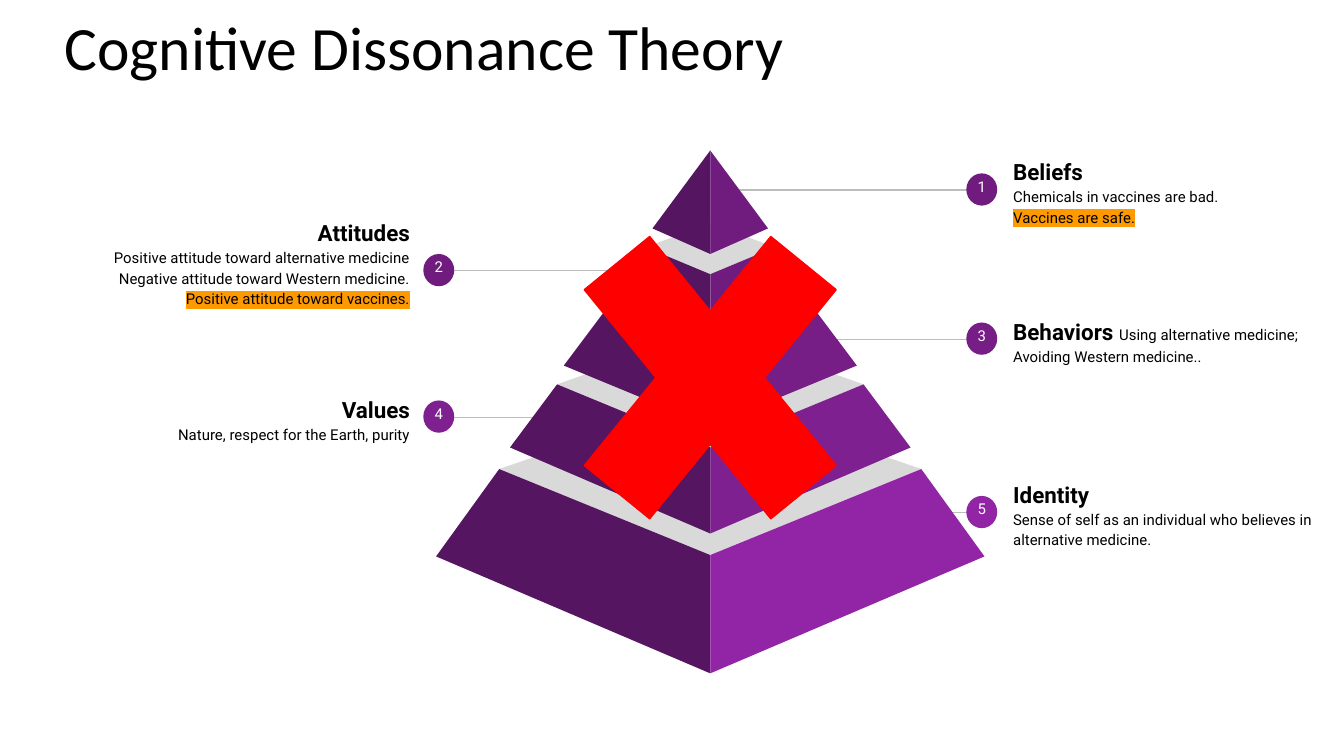
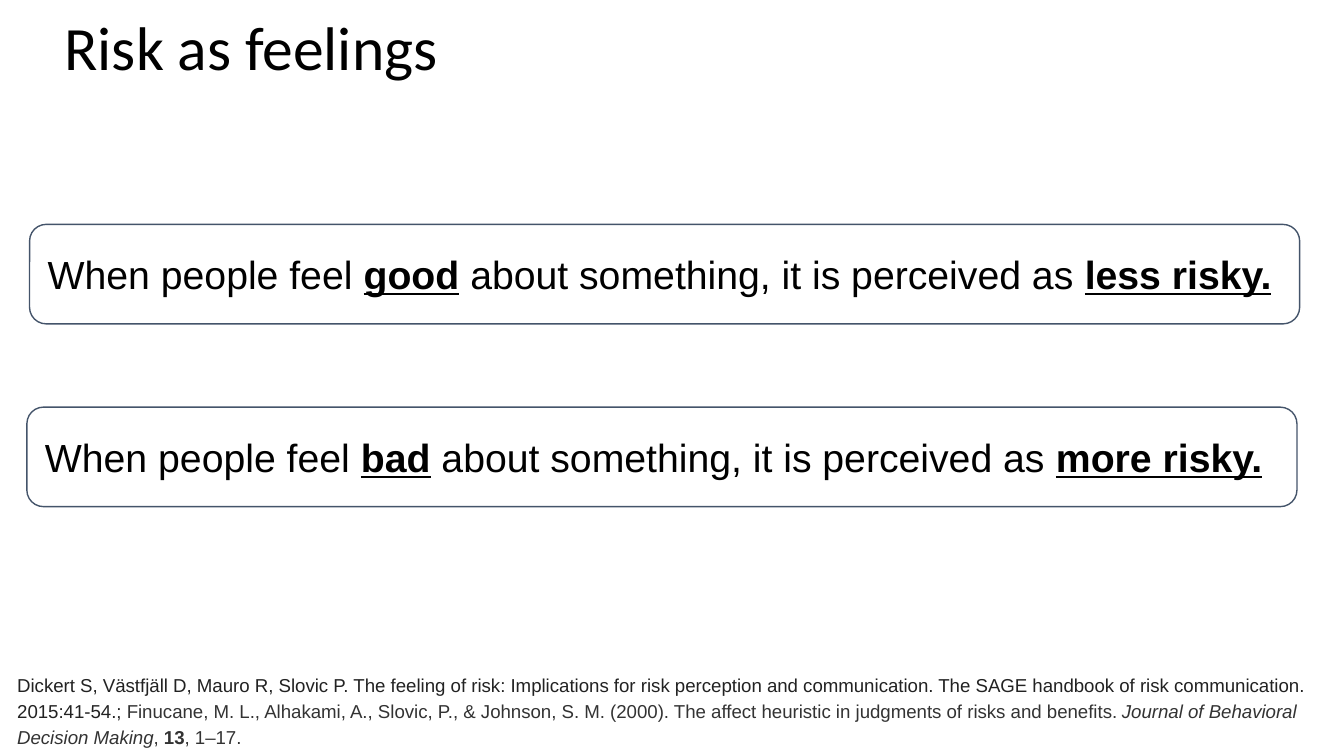
from dataclasses import dataclass

from lxml import etree
from pptx import Presentation
from pptx.dml.color import RGBColor
from pptx.enum.shapes import MSO_CONNECTOR, MSO_SHAPE
from pptx.enum.text import MSO_ANCHOR, MSO_AUTO_SIZE, PP_ALIGN
from pptx.oxml.ns import qn
from pptx.util import Inches, Pt

LEFT, CENTER, RIGHT = PP_ALIGN.LEFT, PP_ALIGN.CENTER, PP_ALIGN.RIGHT
TOP, MIDDLE = MSO_ANCHOR.TOP, MSO_ANCHOR.MIDDLE
NO_FIT = MSO_AUTO_SIZE.NONE
STRAIGHT = MSO_CONNECTOR.STRAIGHT
OVAL, ROUNDED, CROSS = MSO_SHAPE.OVAL, MSO_SHAPE.ROUNDED_RECTANGLE, MSO_SHAPE.MATH_MULTIPLY


@dataclass(frozen=True)
class Theme:
    """Colours, fonts and type sizes of the deck."""
    black: str = "000000"
    white: str = "FFFFFF"
    rule: str = "BDBDBD"
    cap: str = "D9D9D9"
    shade: str = "551561"
    tiers: tuple = ("701C7F", "701C7F", "761E86", "7F2090", "9225A5")
    cross: str = "FF0000"
    mark: str = "FF9900"
    outline: str = "44546A"
    cite: str = "222222"
    cite_light: str = "333333"
    title_font: str = "Calibri"
    label_font: str = "Roboto"
    body_font: str = "Arial"
    title_size: float = 33
    heading_size: float = 12
    label_size: float = 8
    statement_size: float = 21
    cite_size: float = 10
    line_width: float = 0.75


T = Theme()
HEADING = {"name": T.label_font, "size": T.heading_size, "bold": True}
LABEL = {"name": T.label_font, "size": T.label_size}
MARKED = {**LABEL, "mark": T.mark}
STATEMENT = {"name": T.body_font, "size": T.statement_size}
STRESSED = {**STATEMENT, "bold": True, "underline": True}
CITE = {"name": T.body_font, "size": T.cite_size, "color": T.cite}
CITE_LIGHT = {**CITE, "color": T.cite_light}

# number: (side, box top, inner line end, paragraphs)
CALLOUTS = {
    1: (LEFT, 0.97, 5.47, [[("Beliefs", HEADING)],
                           [("Chemicals in vaccines are bad.", LABEL)],
                           [("Vaccines are safe.", MARKED)]]),
    3: (LEFT, 2.08, 6.09, [[("Behaviors ", HEADING),
                            ("Using alternative medicine; Avoiding Western medicine..", LABEL)]]),
    5: (LEFT, 3.37, 6.68, [[("Identity", HEADING)],
                           [("Sense of self as an individual who believes in "
                             "alternative medicine.", LABEL)]]),
    2: (RIGHT, 1.57, 4.71, [[("Attitudes", HEADING)],
                            [("Positive attitude toward alternative medicine", LABEL)],
                            [("Negative attitude toward Western medicine.", LABEL)],
                            [("Positive attitude toward vaccines.", MARKED)]]),
    4: (RIGHT, 2.66, 4.19, [[("Values", HEADING)],
                            [("Nature, respect for the Earth, purity", LABEL)]]),
}
# back y of cap, then half width, side y and centre y of the top and bottom edges
TIERS = [
    (0, (0, 0, 0), (0.43, 0.58, 0.77)),
    (0.54, (0.48, 0.72, 0.92), (0.74, 1.07, 1.37)),
    (0.92, (0.79, 1.2, 1.52), (1.09, 1.6, 2.05)),
    (1.34, (1.14, 1.74, 2.21), (1.49, 2.21, 2.85)),
    (1.83, (1.57, 2.37, 3.01), (2.04, 3.02, 3.89)),
]
STATEMENTS = [((0.2, 3.03), "bad", "more risky."), ((0.22, 1.67), "good", "less risky.")]
CITATION = [[
    ("Dickert S, Västfjäll D, Mauro R, Slovic P. The feeling of risk: Implications for risk "
     "perception and communication. The SAGE handbook of risk communication. 2015:41-54.; ", CITE),
    ("Finucane, M. L., Alhakami, A., Slovic, P., & Johnson, S. M. (2000). The affect heuristic "
     "in judgments of risks and benefits. ", CITE_LIGHT),
    ("Journal of Behavioral Decision Making", {**CITE_LIGHT, "italic": True}),
    (", ", CITE_LIGHT),
    ("13", {**CITE_LIGHT, "bold": True}),
    (", 1–17.", CITE_LIGHT),
]]


def set_attrs(obj, values):
    """Set each named attribute on an object."""
    for name, value in values.items():
        setattr(obj, name, value)


def add_run(p, text, style):
    """Add a run with font values, colour and optional highlight."""
    font_values = {"bold": False, **style}
    color = font_values.pop("color", T.black)
    mark = font_values.pop("mark", None)
    font_values["size"] = Pt(font_values["size"])
    r = p.add_run()
    r.text = text
    set_attrs(r.font, font_values)
    r.font.color.rgb = RGBColor.from_string(color)
    if mark:
        highlight = etree.Element(qn("a:highlight"))
        etree.SubElement(highlight, qn("a:srgbClr"), val=mark)
        r.font._element.find(qn("a:solidFill")).addnext(highlight)


def write(shape, paragraphs, align=LEFT, anchor=TOP, spacing=1.0, insets=(0.1, 0.1, 0.1, 0.1)):
    """Fill a shape's text frame with paragraphs of styled runs."""
    tf = shape.text_frame
    sides = ("margin_left", "margin_top", "margin_right", "margin_bottom")
    set_attrs(tf, {"word_wrap": True, "auto_size": NO_FIT, "vertical_anchor": anchor,
                   **{side: Inches(n) for side, n in zip(sides, insets)}})
    for i, runs in enumerate(paragraphs):
        p = tf.add_paragraph() if i else tf.paragraphs[0]
        set_attrs(p, {"alignment": align, "line_spacing": spacing})
        for text, style in runs:
            add_run(p, text, style)


def add_text(s, box, paragraphs, **options):
    """Add a text box."""
    write(s.shapes.add_textbox(*map(Inches, box)), paragraphs, **options)


def paint(shape, fill=None, line=None):
    """Set fill and line of a shape and drop its shadow."""
    shape.shadow.inherit = False
    if fill:
        shape.fill.solid()
        shape.fill.fore_color.rgb = RGBColor.from_string(fill)
    else:
        shape.fill.background()
    if line:
        shape.line.color.rgb = RGBColor.from_string(line)
        shape.line.width = Pt(T.line_width)
    else:
        shape.line.fill.background()


def add_preset(s, kind, box, fill=None, line=None, adjust=None):
    """Add a painted preset shape."""
    sp = s.shapes.add_shape(kind, *map(Inches, box))
    if adjust:
        sp.adjustments[0] = adjust
    paint(sp, fill, line)
    return sp


def add_polygon(s, points, fill):
    """Add a closed outline through points given in inches."""
    start, *rest = [(Inches(x), Inches(y)) for x, y in points]
    builder = s.shapes.build_freeform(*start)
    builder.add_line_segments(rest, close=True)
    paint(builder.convert_to_shape(), fill)


def add_rule(s, x1, x2, y):
    """Add a thin horizontal line."""
    line = s.shapes.add_connector(STRAIGHT, *map(Inches, (x1, y, x2, y)))
    line.line.color.rgb = RGBColor.from_string(T.rule)
    line.line.width = Pt(T.line_width)
    etree.SubElement(line._element.spPr, qn("a:effectLst"))


def add_slide(prs, title):
    """Add a title-only slide with its formatted title."""
    s = prs.slides.add_slide(prs.slide_layouts[5])
    sp = s.shapes.title
    set_attrs(sp, dict(zip(("left", "top", "width", "height"),
                           map(Inches, (0.41, 0.09, 8.62, 1.09)))))
    write(sp, [[(title, {"name": T.title_font, "size": T.title_size})]],
          spacing=0.9, insets=(0.07, 0.04, 0.07, 0.04))
    return s


def add_callout(s, box, number, align, line_end, paragraphs):
    """Add a text block with its numbered badge and leader line."""
    x, y, w, h = box
    on_right = align == LEFT
    badge_x = x - 0.25 if on_right else x + w
    add_rule(s, line_end, badge_x + (0.2 if on_right else 0.05), y + h / 2)
    add_preset(s, OVAL, (badge_x, y + 0.32, 0.23, 0.24), T.tiers[number - 1])
    add_text(s, (badge_x - 0.03, y + 0.25, 0.29, 0.37),
             [[(str(number), {**LABEL, "color": T.white})]], align=CENTER)
    raised = len(paragraphs) > 3
    add_text(s, box, paragraphs, align=align, anchor=MIDDLE, spacing=1.15,
             insets=(0.1, 0.03, 0.1, 0.17) if raised else (0.1, 0.1, 0.1, 0.1))


def add_pyramid(s, box):
    """Stack the tiers from the base up, mirrored about the centre of the box."""
    x, y, w, _ = box
    axis = x + w / 2
    for (back, upper, lower), color in reversed(list(zip(TIERS, T.tiers))):
        (top_half, top_y, top_mid), (low_half, low_y, low_mid) = upper, lower
        if top_half:
            add_polygon(s, [(axis - top_half, y + top_y), (axis, y + top_mid),
                            (axis + top_half, y + top_y), (axis, y + back)], T.cap)
        for side, fill in ((-1, T.shade), (1, color)):
            face = [(axis + side * top_half, y + top_y), (axis, y + top_mid),
                    (axis, y + low_mid), (axis + side * low_half, y + low_y)]
            add_polygon(s, list(dict.fromkeys(face)), fill)


def add_statement(s, box, feeling, verdict):
    """Add an outlined sentence with two stressed phrases."""
    sp = add_preset(s, ROUNDED, box, line=T.outline, adjust=0.167)
    write(sp, [[("When people feel ", STATEMENT), (feeling, STRESSED),
                (" about something, it is perceived as ", STATEMENT), (verdict, STRESSED)]],
          anchor=MIDDLE)


def build_dissonance(prs):
    """Build the pyramid slide."""
    s = add_slide(prs, "Cognitive Dissonance Theory")
    for number, (align, top, line_end, paragraphs) in CALLOUTS.items():
        left = 7.44 if align == LEFT else 0.68
        add_callout(s, (left, top, 2.47, 0.89), number, align, line_end, paragraphs)
    add_pyramid(s, (3.25, 1.12, 4.07, 3.89))
    add_preset(s, CROSS, (3.95, 1.17, 2.67, 3.28), T.cross, T.cross, 0.235)


def build_feelings(prs):
    """Build the slide with two statements and a citation."""
    s = add_slide(prs, "Risk as feelings")
    add_text(s, (0.03, 4.89, 9.93, 0.74), CITATION, spacing=1.15)
    for (x, y), feeling, verdict in STATEMENTS:
        add_statement(s, (x, y, 9.45, 0.74), feeling, verdict)


def main():
    """Build and save the deck."""
    prs = Presentation()
    width = Inches(10)
    set_attrs(prs, {"slide_width": width, "slide_height": width * 9 // 16})
    build_dissonance(prs)
    build_feelings(prs)
    prs.save("out.pptx")


if __name__ == "__main__":
    main()
